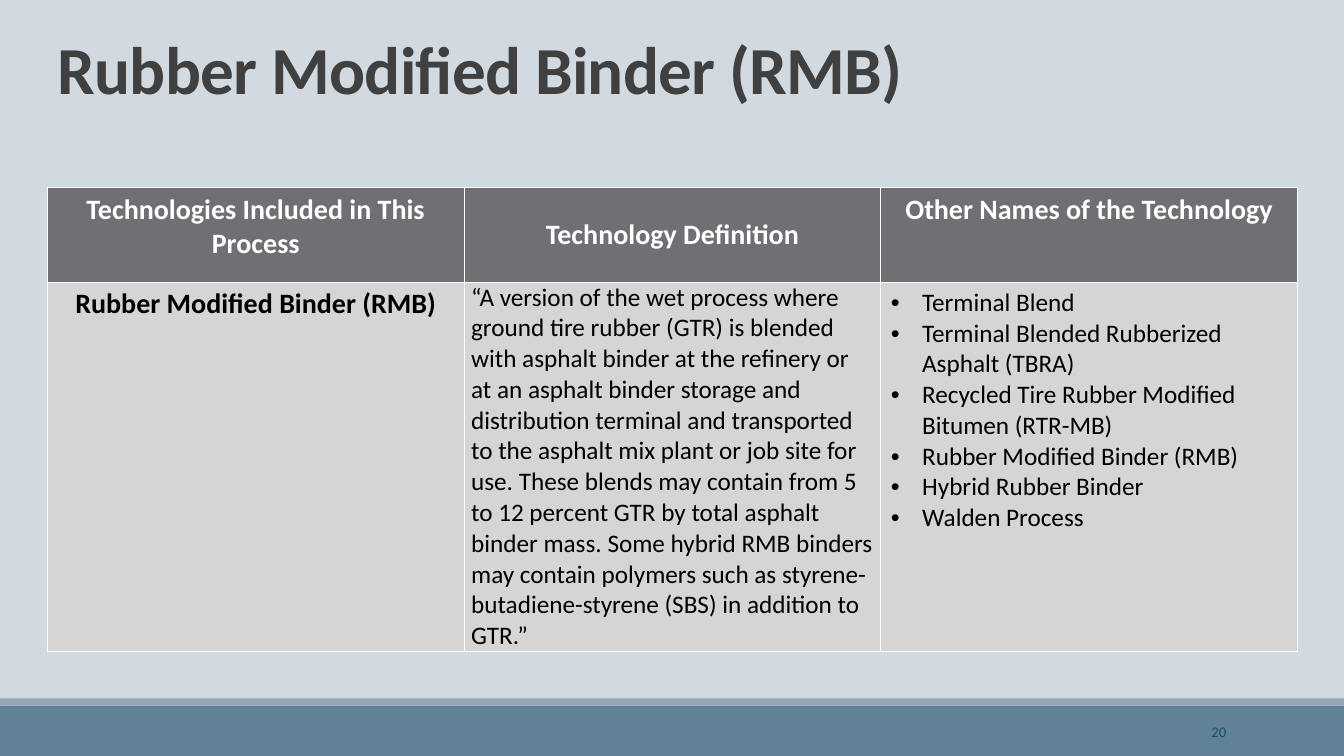
import dataclasses
import pptx
import pptx.util
import pptx.dml.color
import pptx.enum.shapes
import pptx.enum.text
import pptx.oxml
import pptx.oxml.ns

Inches = pptx.util.Inches
Align = pptx.enum.text.PP_ALIGN
Anchor = pptx.enum.text.MSO_ANCHOR


@dataclasses.dataclass(frozen=True)
class Theme:
    font: str = "Calibri"
    back: str = "D1D9E1"
    band: str = "618197"
    stripe: str = "92A9B9"
    title: str = "404040"
    head: str = "6F6F74"
    body: str = "D5D5D6"
    white: str = "FFFFFF"
    black: str = "000000"
    page: str = "184E6D"
    big: float = 48
    label: float = 20
    text: float = 18
    small: float = 10.5


THEME = Theme()
TITLE = "Rubber Modified Binder (RMB)"
HEADS = ["Technologies Included in This Process", "Technology Definition",
         "Other Names of the Technology"]
MEANING = (
    "“A version of the wet process where ground tire rubber (GTR) is blended "
    "with asphalt binder at the refinery or at an asphalt binder storage and "
    "distribution terminal and transported to the asphalt mix plant or job site "
    "for use. These blends may contain from 5 to 12 percent GTR by total asphalt "
    "binder mass. Some hybrid RMB binders may contain polymers such as "
    "styrene-butadiene-styrene (SBS) in addition to GTR.”")
NAMES = ["Terminal Blend", "Terminal Blended Rubberized Asphalt (TBRA)",
         "Recycled Tire Rubber Modified Bitumen (RTR-MB)",
         "Rubber Modified Binder (RMB)", "Hybrid Rubber Binder", "Walden Process"]


def paint(fill, color):
    fill.solid()
    fill.fore_color.rgb = pptx.dml.color.RGBColor.from_string(color)


def write(frame, text, size, color, bold=False, align=Align.LEFT):
    frame.word_wrap = True
    frame.text = text
    for para in frame.paragraphs:
        para.alignment = align
        for run in para.runs:
            run.font.name = THEME.font
            run.font.size = pptx.util.Pt(size)
            run.font.bold = bold
            paint(run.font.fill, color)


def add_text(slide, box, anchor, *style):
    frame = slide.shapes.add_textbox(*map(Inches, box)).text_frame
    write(frame, *style)
    frame.vertical_anchor = anchor
    return frame


def add_title(slide, box):
    frame = add_text(slide, box, Anchor.BOTTOM, TITLE, THEME.big, THEME.title, True)
    para = frame.paragraphs[0]
    para.line_spacing = 0.85
    para.runs[0].font._element.set("spc", "-50")


def add_bar(slide, box, color):
    bar = slide.shapes.add_shape(
        pptx.enum.shapes.MSO_SHAPE.RECTANGLE, *map(Inches, box))
    bar.shadow.inherit = False
    paint(bar.fill, color)
    bar.line.fill.background()


def add_foot(slide, box):
    left, top, width, height = box
    stripe = 0.07
    add_bar(slide, (left, top + stripe, width, height - stripe), THEME.band)
    add_bar(slide, (left, top, width, stripe), THEME.stripe)
    add_text(slide, (left + 10.83, top + 0.13, 1.43, 0.4), Anchor.MIDDLE,
             "20", THEME.small, THEME.page, False, Align.RIGHT)


def edge(cell):
    props = cell._tc.get_or_add_tcPr()
    for spot, side in enumerate("LRTB"):
        props.insert(spot, pptx.oxml.parse_xml(
            f'<a:ln{side} {pptx.oxml.ns.nsdecls("a")} w="12700"><a:solidFill>'
            f'<a:srgbClr val="{THEME.white}"/></a:solidFill></a:ln{side}>'))


def bullet(para):
    props = para._p.get_or_add_pPr()
    props.set("marL", str(Inches(0.31)))
    props.set("indent", str(Inches(-0.31)))
    for tag in ('buFont typeface="Arial"', 'buChar char="•"'):
        props.append(pptx.oxml.parse_xml(
            f'<a:{tag} {pptx.oxml.ns.nsdecls("a")}/>'))


def add_grid(slide, box):
    left, top, width, height = box
    grid = slide.shapes.add_table(2, len(HEADS), *map(Inches, box)).table
    for col in grid.columns:
        col.width = Inches(width / len(HEADS))
    head = 0.94
    grid.rows[0].height = Inches(head)
    grid.rows[1].height = Inches(height - head)
    for cell, text in zip(grid.rows[0].cells, HEADS):
        paint(cell.fill, THEME.head)
        write(cell.text_frame, text, THEME.label, THEME.white, True, Align.CENTER)
    grid.cell(0, 1).vertical_anchor = Anchor.MIDDLE
    name, meaning, names = grid.rows[1].cells
    write(name.text_frame, TITLE, THEME.label, THEME.black, True, Align.CENTER)
    write(meaning.text_frame, MEANING, THEME.text, THEME.black)
    meaning.margin_left = meaning.margin_right = Inches(0.07)
    meaning.margin_top = meaning.margin_bottom = 0
    write(names.text_frame, "\n".join(NAMES), THEME.text, THEME.black)
    for para in names.text_frame.paragraphs:
        bullet(para)
    for cell in grid.rows[1].cells:
        paint(cell.fill, THEME.body)
    for cell in grid.iter_cells():
        edge(cell)


def main():
    deck = pptx.Presentation()
    deck.slide_width = Inches(13.33)
    deck.slide_height = Inches(7.5)
    slide = deck.slides.add_slide(deck.slide_layouts[6])
    paint(slide.background.fill, THEME.back)
    add_foot(slide, (0, 6.93, 13.33, 0.57))
    add_title(slide, (0.47, 0.29, 12.44, 0.83))
    add_grid(slide, (0.47, 1.86, 12.4, 4.6))
    deck.save("out.pptx")


if __name__ == "__main__":
    main()
